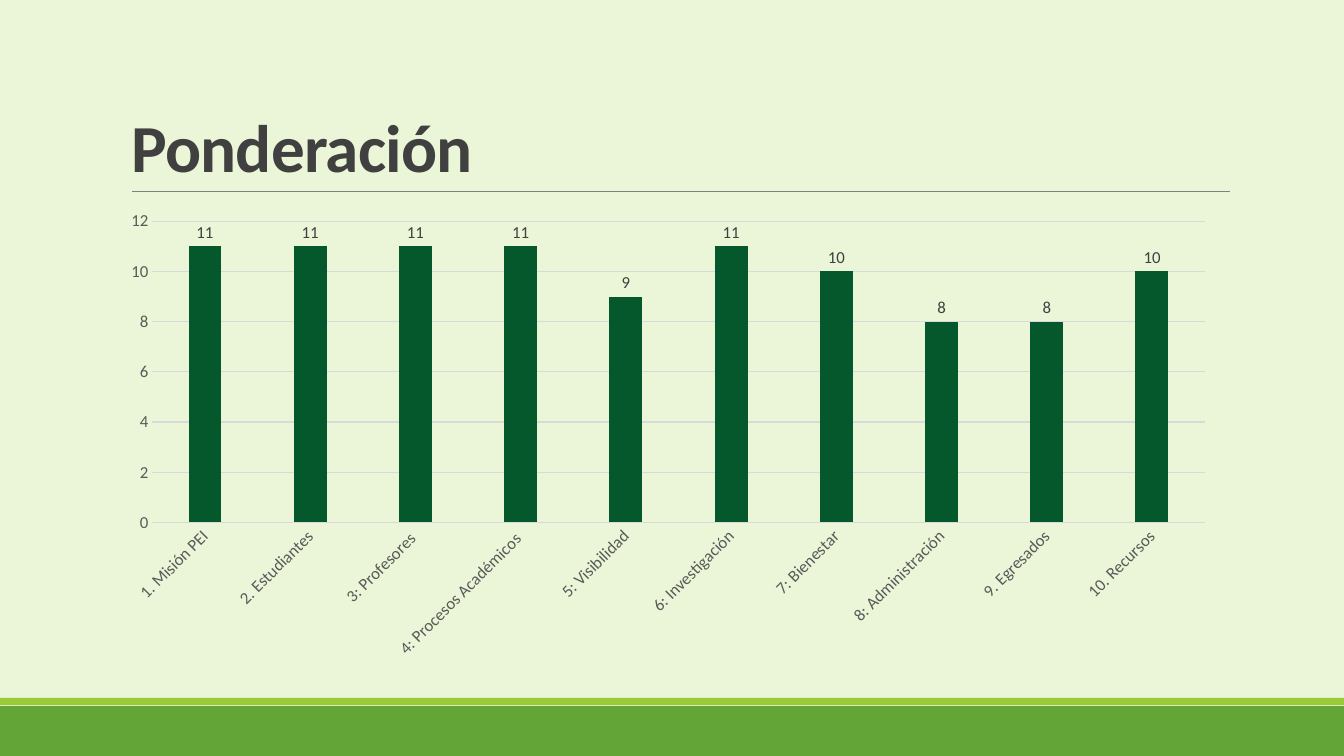
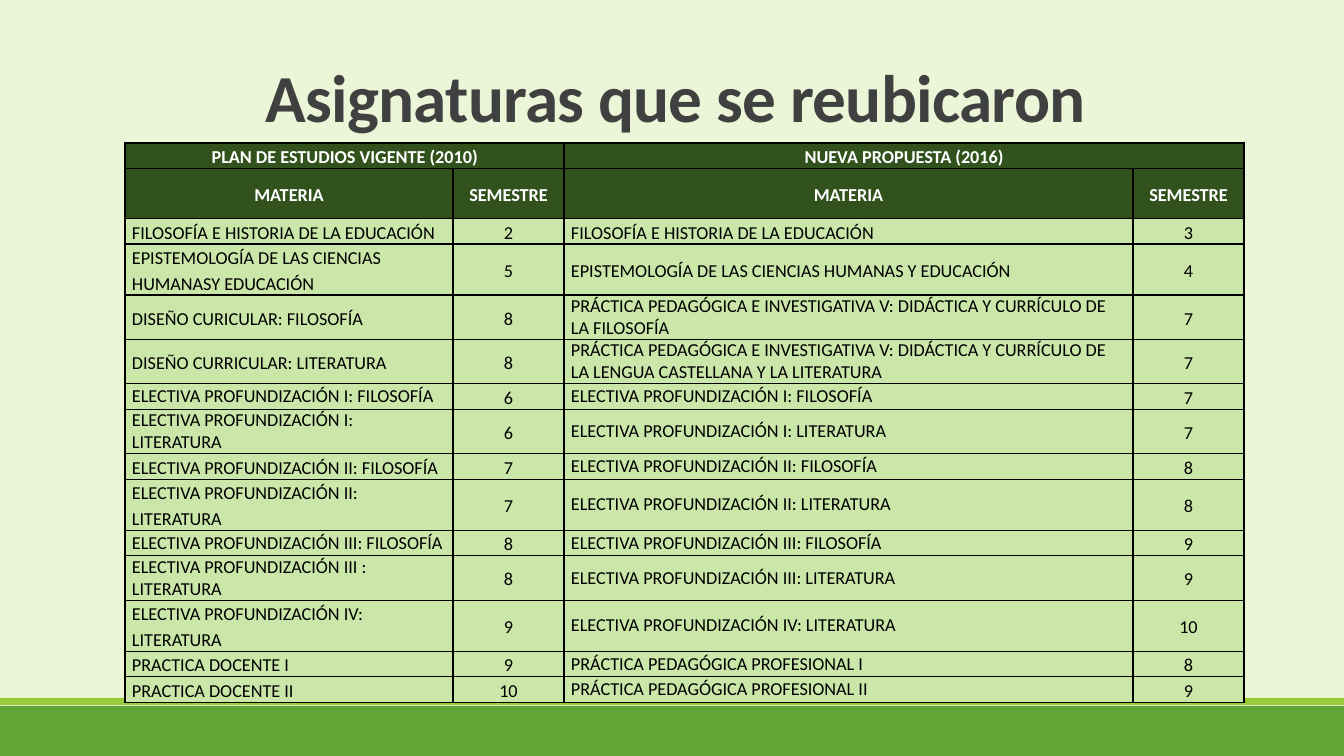
"""Build a weighting chart slide and a relocated-courses table slide."""
from dataclasses import dataclass

from lxml.etree import SubElement
from pptx import Presentation
from pptx.chart.data import CategoryChartData
from pptx.dml.color import RGBColor
from pptx.enum.chart import XL_CHART_TYPE as ChartType, XL_LABEL_POSITION as LabelPosition, XL_TICK_MARK as TickMark
from pptx.enum.shapes import MSO_CONNECTOR as Connector, MSO_SHAPE as Shape
from pptx.enum.text import MSO_ANCHOR as Anchor, MSO_AUTO_SIZE as AutoSize, PP_ALIGN as Align
from pptx.oxml.ns import qn
from pptx.util import Emu, Pt

SLIDE_WIDTH, SLIDE_HEIGHT = 1344, 756
FONT = "Calibri"
BACKGROUND = RGBColor(0xEB, 0xF5, 0xD7)
BAND_GREEN = RGBColor(0x63, 0xA5, 0x37)
STRIPE_GREEN = RGBColor(0x99, 0xCB, 0x38)
RULE_GRAY = RGBColor(0x80, 0x80, 0x80)
DARK_GRAY = RGBColor(0x40, 0x40, 0x40)
AXIS_GRAY = RGBColor(0x59, 0x59, 0x59)
GRID_GRAY = RGBColor(0xD9, 0xD9, 0xD9)
BAR_GREEN = RGBColor(0x05, 0x58, 0x2C)
HEADER_GREEN = RGBColor(0x31, 0x52, 0x1C)
BODY_GREEN = RGBColor(0xCA, 0xE6, 0xA8)
WHITE = RGBColor(0xFF, 0xFF, 0xFF)
BLACK = RGBColor(0x00, 0x00, 0x00)
LOOSE, SINGLE = 1.15, 1.0


@dataclass(frozen=True)
class Box:
    left: int
    top: int
    width: int
    height: int

    def emu(self) -> tuple:
        return tuple(px(length) for length in (self.left, self.top, self.width, self.height))


@dataclass(frozen=True)
class Band:
    box: Box
    color: RGBColor


@dataclass(frozen=True)
class Course:
    height: int
    old_name: str
    old_semester: int
    new_name: str
    new_semester: int
    old_spacing: float = LOOSE
    new_spacing: float = SINGLE


BANDS = (
    Band(Box(0, 706, SLIDE_WIDTH, 50), BAND_GREEN),
    Band(Box(0, 698, SLIDE_WIDTH, 7), STRIPE_GREEN),
)
WEIGHTS = {
    "1. Misión PEI": 11,
    "2. Estudiantes": 11,
    "3: Profesores ": 11,
    "4: Procesos Académicos ": 11,
    "5: Visibilidad": 9,
    "6: Investigación": 11,
    "7: Bienestar": 10,
    "8: Administración": 8,
    "9. Egresados": 8,
    "10. Recursos": 10,
}
COLUMN_WIDTHS = (328, 111, 569, 111)
HEADER_HEIGHTS = (24, 50)
PLANS = ("PLAN DE ESTUDIOS VIGENTE (2010)", "NUEVA PROPUESTA (2016)")
HEADINGS = ("MATERIA", "SEMESTRE") * 2
PRACTICE = "PRÁCTICA PEDAGÓGICA E INVESTIGATIVA V: DIDÁCTICA Y CURRÍCULO DE "
ELECTIVE = "ELECTIVA PROFUNDIZACIÓN "
COURSES = (
    Course(24, "FILOSOFÍA E HISTORIA DE LA EDUCACIÓN", 2,
           "FILOSOFÍA E HISTORIA DE LA EDUCACIÓN", 3, new_spacing=LOOSE),
    Course(47, "EPISTEMOLOGÍA DE LAS CIENCIAS HUMANASY EDUCACIÓN", 5,
           "EPISTEMOLOGÍA DE LAS CIENCIAS HUMANAS Y EDUCACIÓN", 4, new_spacing=LOOSE),
    Course(42, "DISEÑO CURICULAR: FILOSOFÍA", 8, PRACTICE + "LA FILOSOFÍA", 7),
    Course(42, "DISEÑO CURRICULAR: LITERATURA", 8,
           PRACTICE + "LA LENGUA CASTELLANA Y LA LITERATURA", 7),
    Course(23, ELECTIVE + "I: FILOSOFÍA", 6, ELECTIVE + "I: FILOSOFÍA", 7, SINGLE),
    Course(42, ELECTIVE + "I: LITERATURA", 6, ELECTIVE + "I: LITERATURA", 7, SINGLE),
    Course(24, ELECTIVE + "II: FILOSOFÍA", 7, ELECTIVE + "II: FILOSOFÍA", 8),
    Course(47, ELECTIVE + "II: LITERATURA", 7, ELECTIVE + "II: LITERATURA", 8),
    Course(23, ELECTIVE + "III: FILOSOFÍA", 8, ELECTIVE + "III: FILOSOFÍA", 9, SINGLE),
    Course(42, ELECTIVE + "III : LITERATURA", 8, ELECTIVE + "III: LITERATURA", 9, SINGLE),
    Course(47, ELECTIVE + "IV: LITERATURA", 9, ELECTIVE + "IV: LITERATURA", 10),
    Course(23, "PRACTICA DOCENTE I", 9, "PRÁCTICA PEDAGÓGICA PROFESIONAL I", 8),
    Course(23, "PRACTICA DOCENTE II", 10, "PRÁCTICA PEDAGÓGICA PROFESIONAL II", 9),
)


def px(length: int) -> Emu:
    return Emu(round(length * 12192000 / SLIDE_WIDTH))


def style_font(font, size: int, color: RGBColor, bold: bool = False) -> None:
    font.name = FONT
    font.size = Pt(size)
    font.bold = bold
    font.color.rgb = color


def add_titled_slide(presentation, text: str, box: Box, align: Align):
    slide = presentation.slides.add_slide(presentation.slide_layouts[5])
    for band in BANDS:
        shape = slide.shapes.add_shape(Shape.RECTANGLE, *band.box.emu())
        shape.shadow.inherit = False
        shape.fill.solid()
        shape.fill.fore_color.rgb = band.color
        shape.line.fill.background()
    rule = slide.shapes.add_connector(Connector.STRAIGHT, px(132), px(191), px(1230), px(191))
    rule.line.color.rgb = RULE_GRAY
    rule.line.width = Pt(0.5)
    SubElement(rule._element.spPr, qn("a:effectLst"))

    title = slide.shapes.title
    title.left, title.top, title.width, title.height = box.emu()
    frame = title.text_frame
    frame.text = text
    frame.word_wrap = True
    frame.auto_size = AutoSize.NONE
    frame.vertical_anchor = Anchor.BOTTOM
    paragraph = frame.paragraphs[0]
    paragraph.alignment = align
    paragraph.line_spacing = 0.85
    run = paragraph.runs[0]
    style_font(run.font, 48, DARK_GRAY, bold=True)
    run.font._element.set("spc", "-50")
    return slide


def add_weight_chart(slide, box: Box) -> None:
    data = CategoryChartData()
    data.categories = list(WEIGHTS)
    data.add_series("Series 1", list(WEIGHTS.values()))
    chart = slide.shapes.add_chart(ChartType.COLUMN_CLUSTERED, *box.emu(), data).chart
    chart.has_legend = False
    chart.has_title = False
    style_font(chart.font, 10, BLACK)

    for axis in (chart.category_axis, chart.value_axis):
        axis.major_tick_mark = axis.minor_tick_mark = TickMark.NONE
        style_font(axis.tick_labels.font, 12, AXIS_GRAY)
    category_axis, value_axis = chart.category_axis, chart.value_axis
    category_axis._element.txPr.find(qn("a:bodyPr")).set("rot", "-2700000")
    value_axis.minimum_scale, value_axis.maximum_scale, value_axis.major_unit = 0, 12, 2
    value_axis.has_major_gridlines = True
    value_axis.format.line.fill.background()
    for line in (category_axis.format.line, value_axis.major_gridlines.format.line):
        line.color.rgb = GRID_GRAY
        line.width = Pt(0.75)

    plot = chart.plots[0]
    plot.gap_width, plot.overlap = 219, -27
    plot.vary_by_categories = False
    series = plot.series[0]
    series.format.fill.solid()
    series.format.fill.fore_color.rgb = BAR_GREEN
    labels = series.data_labels
    labels.show_value = True
    labels.position = LabelPosition.OUTSIDE_END
    style_font(labels.font, 12, DARK_GRAY)


def paint_cell(cell, fill: RGBColor) -> None:
    properties = cell._tc.get_or_add_tcPr()
    for side in ("lnL", "lnR", "lnT", "lnB"):
        border = SubElement(properties, qn(f"a:{side}"), w=str(Pt(1)))
        SubElement(SubElement(border, qn("a:solidFill")), qn("a:srgbClr"), val=str(BLACK))
    cell.fill.solid()
    cell.fill.fore_color.rgb = fill
    cell.vertical_anchor = Anchor.MIDDLE
    cell.margin_left = cell.margin_right = px(7)
    cell.margin_top = cell.margin_bottom = 0


def write_cell(cell, text: str, header: bool, align: Align, spacing: float = LOOSE) -> None:
    cell.text_frame.text = text
    paragraph = cell.text_frame.paragraphs[0]
    paragraph.alignment = align
    paragraph.line_spacing = spacing
    style_font(paragraph.runs[0].font, 13, WHITE if header else BLACK, bold=header)


def add_course_table(slide, left: int, top: int) -> None:
    heights = HEADER_HEIGHTS + tuple(course.height for course in COURSES)
    box = Box(left, top, sum(COLUMN_WIDTHS), sum(heights))
    table = slide.shapes.add_table(len(heights), len(COLUMN_WIDTHS), *box.emu()).table
    table.horz_banding = False
    for column, width in zip(table.columns, COLUMN_WIDTHS):
        column.width = px(width)
    for index, (row, height) in enumerate(zip(table.rows, heights)):
        row.height = px(height)
        for cell in row.cells:
            paint_cell(cell, HEADER_GREEN if index < len(HEADER_HEIGHTS) else BODY_GREEN)

    for column, plan in zip((0, 2), PLANS):
        table.cell(0, column).merge(table.cell(0, column + 1))
        write_cell(table.cell(0, column), plan, True, Align.CENTER)
    for column, heading in enumerate(HEADINGS):
        write_cell(table.cell(1, column), heading, True, Align.CENTER)
    for row, course in enumerate(COURSES, start=len(HEADER_HEIGHTS)):
        write_cell(table.cell(row, 0), course.old_name, False, Align.LEFT, course.old_spacing)
        write_cell(table.cell(row, 1), str(course.old_semester), False, Align.CENTER)
        write_cell(table.cell(row, 2), course.new_name, False, Align.LEFT, course.new_spacing)
        write_cell(table.cell(row, 3), str(course.new_semester), False, Align.CENTER)


def main() -> None:
    presentation = Presentation()
    presentation.slide_width, presentation.slide_height = px(SLIDE_WIDTH), px(SLIDE_HEIGHT)
    background = presentation.slide_master.background.fill
    background.solid()
    background.fore_color.rgb = BACKGROUND

    weights = add_titled_slide(presentation, "Ponderación", Box(121, 31, 1109, 160), Align.LEFT)
    add_weight_chart(weights, Box(109, 202, 1118, 466))
    courses = add_titled_slide(
        presentation, "Asignaturas que se reubicaron", Box(121, 50, 1109, 91), Align.CENTER)
    add_course_table(courses, 125, 143)
    presentation.save("out.pptx")


if __name__ == "__main__":
    main()
